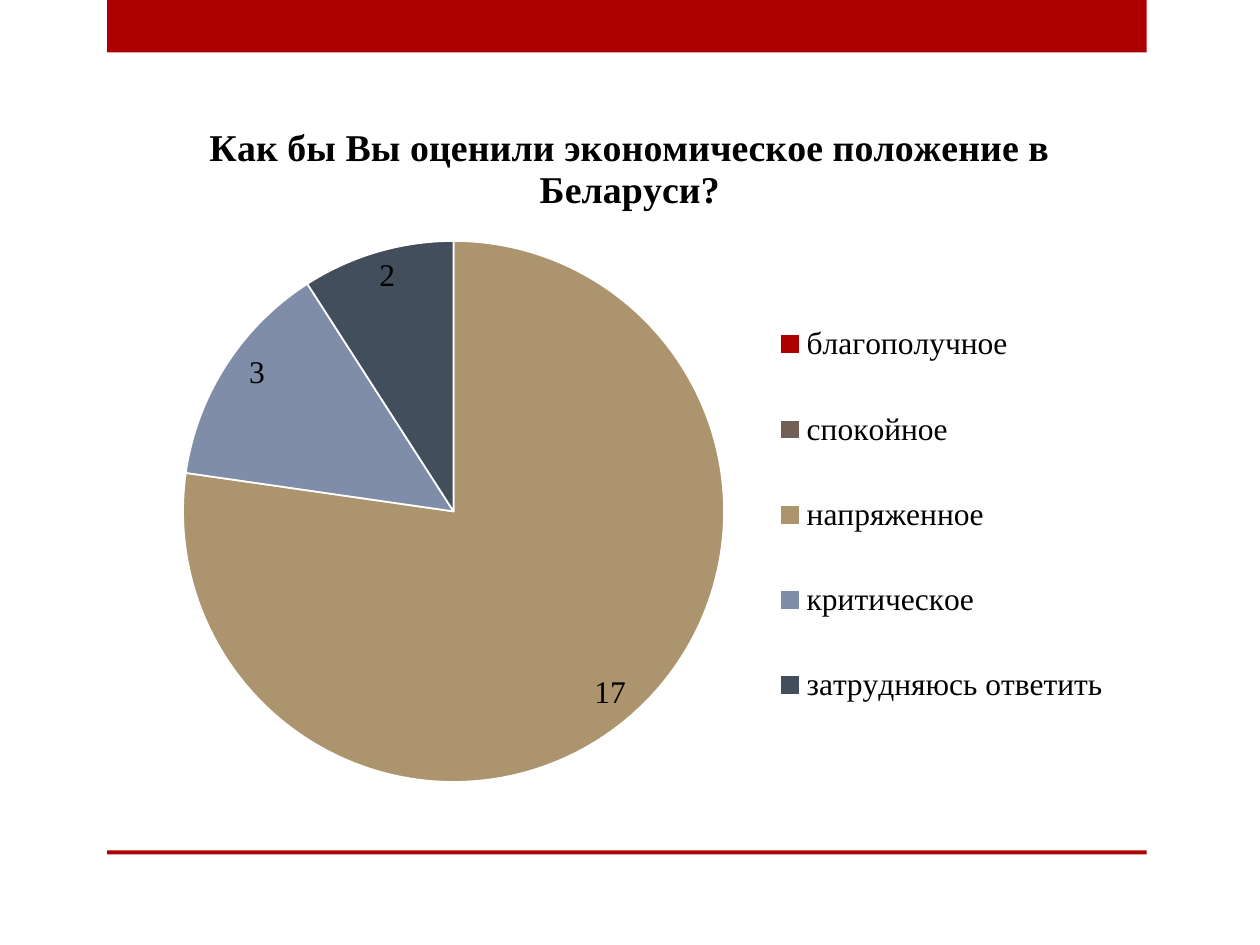
from dataclasses import dataclass

from lxml.etree import SubElement
from pptx import Presentation
from pptx.chart.data import CategoryChartData as ChartData
from pptx.dml.color import RGBColor as RGB
from pptx.enum.chart import XL_CHART_TYPE as Kind
from pptx.enum.chart import XL_LABEL_POSITION as Spot
from pptx.enum.chart import XL_LEGEND_POSITION as Side
from pptx.enum.shapes import MSO_SHAPE as Shape
from pptx.oxml.ns import qn
from pptx.util import Pt


@dataclass(frozen=True)
class Theme:
    font: str = "Times New Roman"
    body: float = 18
    head: float = 21.6
    text: RGB = RGB(0, 0, 0)
    edge: RGB = RGB(255, 255, 255)
    red: RGB = RGB.from_string("AD0101")
    pie: tuple = ("AD0101", "726056", "AC956E", "808DA9", "424E5B")


theme = Theme()
wide, high = 646.6, 402.5


def place(part, after, box, modes):
    """Lay out a chart part by x, y, w, h in points from the chart's corner."""
    for old in part.findall(qn("c:layout")):
        part.remove(old)
    layout = part.makeelement(qn("c:layout"))
    if after:
        part.find(qn(after)).addnext(layout)
    else:
        part.insert(0, layout)
    manual = SubElement(layout, qn("c:manualLayout"))
    sizes = zip("xywh", box, (wide, high, wide, high))
    for tag, val in modes + [(tag, val / full) for tag, val, full in sizes]:
        SubElement(manual, qn(f"c:{tag}")).set("val", str(val))


deck = Presentation()
deck.slide_width, deck.slide_height = Pt(720), Pt(540)
slide = deck.slides.add_slide(deck.slide_layouts[6])

# Red bands above and below the chart
for top, tall in ((0, 30), (486, 2.2)):
    band = slide.shapes.add_shape(Shape.RECTANGLE, Pt(61.2), Pt(top), Pt(594), Pt(tall))
    band.shadow.inherit = False
    band.fill.solid()
    band.fill.fore_color.rgb = theme.red
    band.line.fill.background()

# Pie of answers
data = ChartData()
data.categories = ["благополучное", "спокойное", "напряженное", "критическое", "затрудняюсь ответить"]
data.add_series("Series 1", (None, None, 17, 3, 2))
chart = slide.shapes.add_chart(
    Kind.PIE, Pt(36.7), Pt(54.7), Pt(wide), Pt(high), data
).chart
chart.font.name = theme.font
chart.font.size = Pt(theme.body)
chart.font.color.rgb = theme.text

chart.has_title = True
title = chart.chart_title.text_frame
title.text = "Как бы Вы оценили экономическое положение в Беларуси?"
font = title.paragraphs[0].runs[0].font
font.name, font.size, font.bold = theme.font, Pt(theme.head), True
font.color.rgb = theme.text

plot = chart.plots[0]
plot.vary_by_categories = True
votes = plot.series[0]
for i, color in enumerate(theme.pie):
    form = votes.points[i].format
    form.fill.solid()
    form.fill.fore_color.rgb = RGB.from_string(color)
    form.line.color.rgb = theme.edge
    form.line.width = Pt(1)

labels = votes.data_labels
labels.show_value = True
labels.show_percentage = False
labels.position = Spot.INSIDE_END
votes.points[3].data_label.position = Spot.INSIDE_END

chart.has_legend = True
chart.legend.position = Side.RIGHT
chart.legend.include_in_layout = False

# Fixed places for pie and legend, and a nudge for one label
edges = [("xMode", "edge"), ("yMode", "edge")]
root = chart.element
area = root.find(f".//{qn('c:plotArea')}")
place(area, None, (67.9, 83, 309.2, 309.2), [("layoutTarget", "inner")] + edges)
place(root.find(f".//{qn('c:legend')}"), "c:legendPos", (385, 103, 233, 273), edges)
place(root.find(f".//{qn('c:dLbl')}"), "c:idx", (9.7, -7.4), [])

deck.save("out.pptx")
